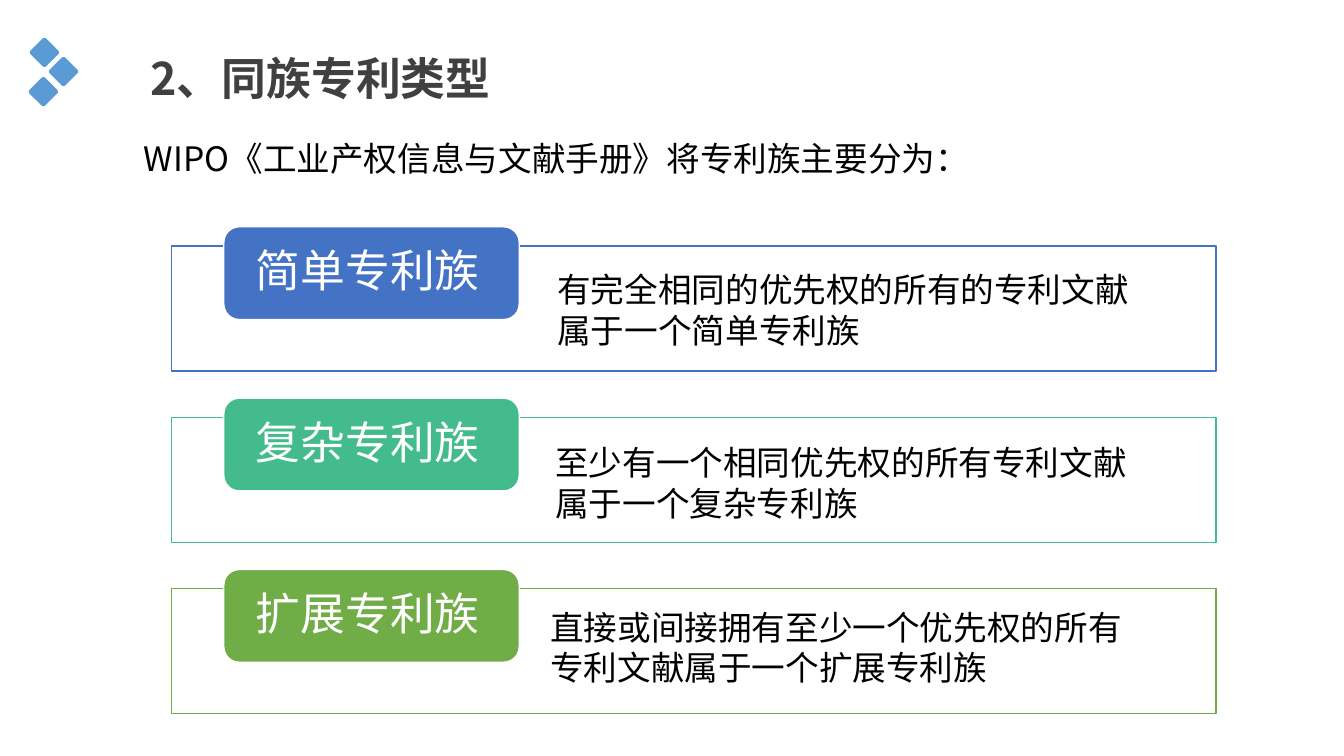
import dataclasses

import lxml.etree
import pptx
import pptx.dml.color
import pptx.enum.shapes
import pptx.enum.text
import pptx.oxml.ns
import pptx.util
from pptx.util import Inches

RGB = pptx.dml.color.RGBColor.from_string
SHAPE = pptx.enum.shapes.MSO_SHAPE
ANCHOR = pptx.enum.text.MSO_ANCHOR


@dataclasses.dataclass(frozen=True)
class Theme:
    accent: str = "5B9BD5"
    heading: str = "404040"
    text: str = "000000"
    white: str = "FFFFFF"
    font: str = "Noto Sans CJK SC"
    tab_font: str = "Calibri"
    large: int = 32
    body: int = 24
    leading: float = 1.22


@dataclasses.dataclass(frozen=True)
class PatentFamily:
    name: str
    colour: str
    description: tuple[str, ...]
    left: float
    top: float


THEME = Theme()
ROW_TOP, ROW_PITCH = 2.44, 1.7
DIAMOND_SIDE = 0.21
DIAMOND_CENTRES = ((0.44, 0.52), (0.63, 0.71), (0.43, 0.91))
FAMILIES = (
    PatentFamily("简单专利族", "4472C4",
                 ("有完全相同的优先权的所有的专利文献", "属于一个简单专利族"), 5.43, 2.61),
    PatentFamily("复杂专利族", "43BB8D",
                 ("至少有一个相同优先权的所有专利文献", "属于一个复杂专利族"), 5.41, 4.33),
    PatentFamily("扩展专利族", "70AD47",
                 ("直接或间接拥有至少一个优先权的所有", "专利文献属于一个扩展专利族"), 5.36, 5.96),
)


def write(shape, lines, size: int, colour: str, *, bold: bool = False,
          font: str = THEME.font, spacing=None, anchor=ANCHOR.TOP,
          insets: tuple[float, float] = (0.1, 0.05)) -> None:
    """Fill a shape with one paragraph per line; spacing defaults to the theme leading."""
    frame = shape.text_frame
    side, end = map(Inches, insets)
    frame_format = {
        "word_wrap": True, "auto_size": pptx.enum.text.MSO_AUTO_SIZE.NONE,
        "vertical_anchor": anchor, "margin_left": side, "margin_right": side,
        "margin_top": end, "margin_bottom": end,
    }
    for name, value in frame_format.items():
        setattr(frame, name, value)
    for index, line in enumerate(lines):
        paragraph = frame.paragraphs[0] if index == 0 else frame.add_paragraph()
        paragraph.alignment = pptx.enum.text.PP_ALIGN.LEFT
        paragraph.line_spacing = spacing or pptx.util.Pt(size * THEME.leading)
        paragraph.space_before = pptx.util.Pt(0)
        run = paragraph.add_run()
        run.text = line
        run_format = {"name": font, "size": pptx.util.Pt(size), "bold": bold}
        for name, value in run_format.items():
            setattr(run.font, name, value)
        run.font.color.rgb = RGB(colour)
        east_asian = lxml.etree.SubElement(run._r.get_or_add_rPr(), pptx.oxml.ns.qn("a:ea"))
        east_asian.set("typeface", font)


def add_text(slide, box: tuple[float, ...], lines) -> None:
    write(slide.shapes.add_textbox(*map(Inches, box)), lines, THEME.body, THEME.text)


def add_block(slide, kind, box: tuple[float, ...], fill: str, line: str, width: float):
    block = slide.shapes.add_shape(kind, *map(Inches, box))
    block.shadow.inherit = False
    block.fill.solid()
    block.fill.fore_color.rgb = RGB(fill)
    block.line.color.rgb = RGB(line)
    block.line.width = pptx.util.Pt(width)
    return block


def add_diamond(slide, centre: tuple[float, float]) -> None:
    left, top = (value - DIAMOND_SIDE / 2 for value in centre)
    diamond = add_block(slide, SHAPE.ROUNDED_RECTANGLE,
                        (left, top, DIAMOND_SIDE, DIAMOND_SIDE),
                        THEME.accent, THEME.accent, 0.75)
    diamond.adjustments[0] = 0.1
    diamond.rotation = 45


def add_family(slide, family: PatentFamily, top: float) -> None:
    panel = add_block(slide, SHAPE.RECTANGLE, (1.7, top, 10.36, 1.24),
                      THEME.white, family.colour, 1)
    fill_colour = panel.fill._xPr.find(".//" + pptx.oxml.ns.qn("a:srgbClr"))
    lxml.etree.SubElement(fill_colour, pptx.oxml.ns.qn("a:alpha")).set("val", "90000")
    tab = add_block(slide, SHAPE.ROUNDED_RECTANGLE, (2.22, top - 0.19, 2.93, 0.92),
                    family.colour, THEME.white, 1)
    write(tab, [family.name], THEME.large, THEME.white, font=THEME.tab_font,
          spacing=0.9, anchor=ANCHOR.MIDDLE, insets=(0.27, 0))
    add_text(slide, (family.left, family.top, 6.23, 0.91), family.description)


def main() -> None:
    deck = pptx.Presentation()
    deck.slide_width, deck.slide_height = Inches(13.33), Inches(7.5)
    slide = deck.slides.add_slide(deck.slide_layouts.get_by_name("Title Only"))
    title = slide.shapes.title
    title.left, title.top, title.width, title.height = map(Inches, (1.39, 0.44, 6.53, 0.64))
    write(title, ["2、同族专利类型"], THEME.large, THEME.heading, bold=True)
    for centre in DIAMOND_CENTRES:
        add_diamond(slide, centre)
    add_text(slide, (1.33, 1.31, 8.53, 0.5), ["WIPO《工业产权信息与文献手册》将专利族主要分为："])
    for row, family in enumerate(FAMILIES):
        add_family(slide, family, ROW_TOP + row * ROW_PITCH)
    deck.save("out.pptx")


if __name__ == "__main__":
    main()
